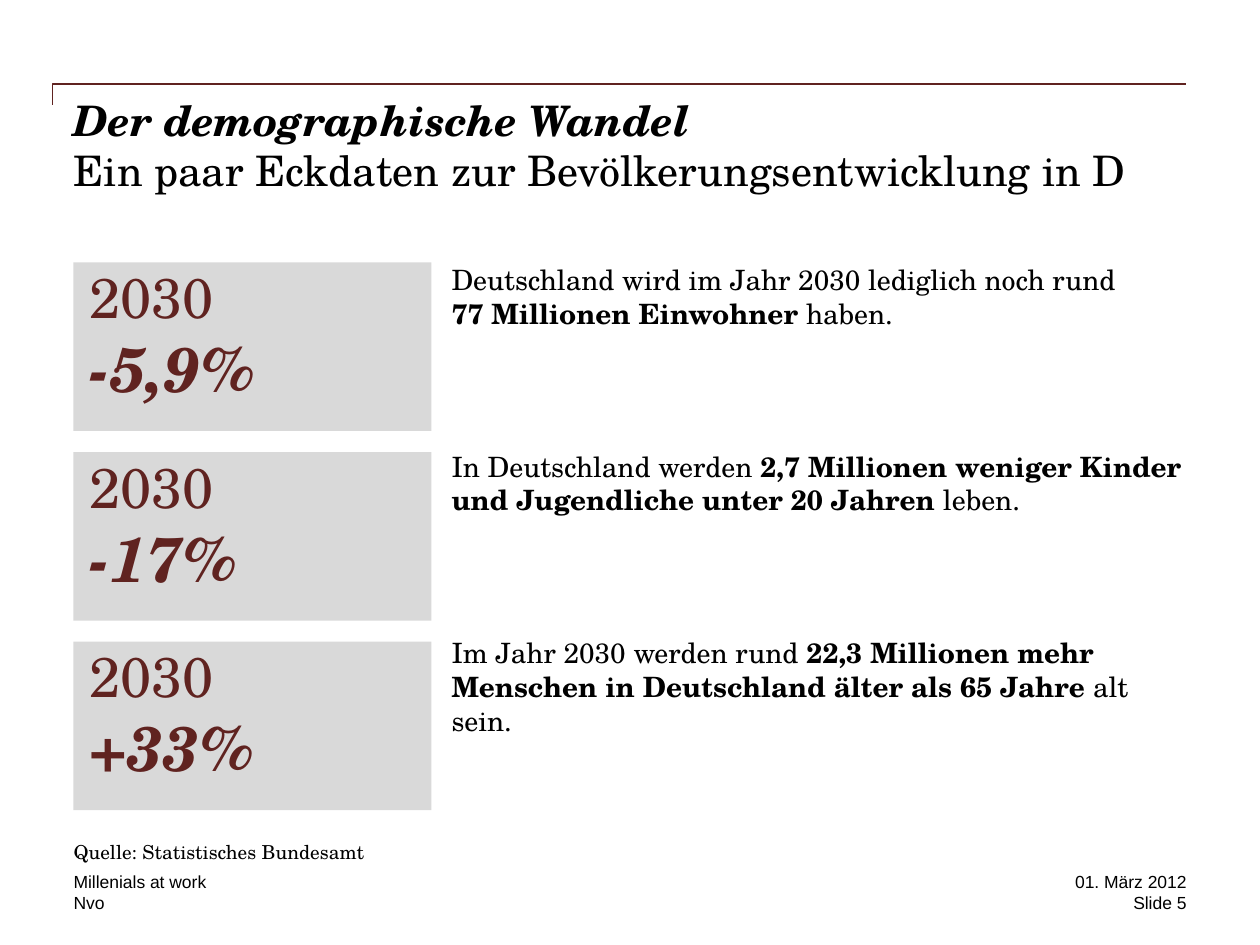
from lxml import etree
from pptx import Presentation
from pptx.dml.color import RGBColor
from pptx.enum.shapes import MSO_SHAPE
from pptx.enum.text import MSO_ANCHOR, PP_ALIGN
from pptx.oxml.ns import qn
from pptx.util import Pt

RECTANGLE = MSO_SHAPE.RECTANGLE
TOP, BOTTOM = MSO_ANCHOR.TOP, MSO_ANCHOR.BOTTOM
LEFT, RIGHT = PP_ALIGN.LEFT, PP_ALIGN.RIGHT

SERIF, SANS = "TeX Gyre Schola", "Arial"
BLACK, MAROON, GREY = "000000", "602320", "D9D9D9"

FIGURES = ["-5,9%", "-17%", "+33%"]
STATEMENTS = [
    ("Deutschland wird im Jahr 2030 lediglich noch rund \v", "77 Millionen Einwohner", " haben."),
    ("In Deutschland werden ", "2,7 Millionen weniger Kinder und Jugendliche unter 20 Jahren", " leben."),
    ("Im Jahr 2030 werden rund ", "22,3 Millionen mehr Menschen in Deutschland älter als 65 Jahre", " alt sein."),
]


def color(value):
    return RGBColor.from_string(value)


def format_paragraph(paragraph, size, font=SERIF, text_color=BLACK, alignment=LEFT):
    paragraph.alignment = alignment
    for run in paragraph.runs:
        run.font.size = Pt(size)
        run.font.name = font
        run.font.color.rgb = color(text_color)
    for line_break in paragraph._p.findall(qn("a:br")):
        etree.SubElement(line_break, qn("a:rPr"), sz=str(size * 100))


def prepare_frame(text_frame, inset=0, anchor=TOP, wrap=True):
    text_frame.word_wrap = wrap
    text_frame.vertical_anchor = anchor
    text_frame.margin_left = Pt(inset)
    text_frame.margin_top = text_frame.margin_right = text_frame.margin_bottom = 0


def add_text(slide, box, text, size, font=SERIF, alignment=LEFT, anchor=TOP, wrap=True):
    text_frame = slide.shapes.add_textbox(*map(Pt, box)).text_frame
    prepare_frame(text_frame, anchor=anchor, wrap=wrap)
    paragraph = text_frame.paragraphs[0]
    paragraph.text = text
    format_paragraph(paragraph, size, font, alignment=alignment)
    return paragraph


def add_header_rule(slide, left, top, width, height):
    builder = slide.shapes.build_freeform(Pt(left), Pt(top + height))
    builder.add_line_segments([(Pt(left), Pt(top)), (Pt(left + width), Pt(top))], close=False)
    rule = builder.convert_to_shape()
    rule.shadow.inherit = False
    rule.fill.background()
    rule.line.color.rgb = color(MAROON)
    rule.line.width = Pt(1)


def add_title(slide, box):
    title = add_text(
        slide, box, "Der demographische Wandel\vEin paar Eckdaten zur Bevölkerungsentwicklung in D", 24
    )
    title.runs[0].font.bold = title.runs[0].font.italic = True


def add_figure_card(slide, box, figure):
    card = slide.shapes.add_shape(RECTANGLE, *map(Pt, box))
    card.shadow.inherit = False
    card.fill.solid()
    card.fill.fore_color.rgb = color(GREY)
    card.line.fill.background()
    text_frame = card.text_frame
    prepare_frame(text_frame, inset=9)
    text_frame.text = f"2030\n{figure}"
    year, change = text_frame.paragraphs
    format_paragraph(year, 32, text_color=MAROON)
    format_paragraph(change, 36, text_color=MAROON)
    change.runs[0].font.bold = change.runs[0].font.italic = True


def add_figure_column(slide, left, top, width, height, gap):
    card_height = (height - gap * (len(FIGURES) - 1)) / len(FIGURES)
    for index, figure in enumerate(FIGURES):
        card_top = top + index * (card_height + gap)
        add_figure_card(slide, (left, card_top, width, card_height), figure)


def add_statements(slide, box):
    text_frame = slide.shapes.add_textbox(*map(Pt, box)).text_frame
    prepare_frame(text_frame)
    for index, (opening, emphasis, ending) in enumerate(STATEMENTS):
        paragraph = text_frame.add_paragraph() if index else text_frame.paragraphs[0]
        paragraph.text = opening
        paragraph.add_run().text = emphasis
        paragraph.add_run().text = ending
        format_paragraph(paragraph, 16)
        paragraph.runs[1].font.bold = True
        paragraph.space_before = Pt(58.3 if index else 0)
        paragraph.space_after = Pt(10)


def add_footer(slide, left, top, width, line_height):
    right_width = 120
    right = left + width - right_width
    second = top + line_height
    add_text(slide, (left, top, 414, line_height), "Millenials at work", 10, SANS, anchor=BOTTOM)
    add_text(slide, (left, second, 204, line_height), "Nvo", 10, SANS)
    add_text(slide, (right, top, right_width, line_height), "01. März 2012", 10, SANS, RIGHT)
    add_text(slide, (right, second, right_width, line_height), "Slide 5", 10, SANS, RIGHT)


def main():
    presentation = Presentation()
    presentation.slide_width, presentation.slide_height = Pt(720), Pt(540)
    slide = presentation.slides.add_slide(presentation.slide_layouts[6])
    add_header_rule(slide, 30, 48, 648, 12)
    add_title(slide, (42, 54, 636, 72))
    add_statements(slide, (258, 150, 420, 348))
    add_figure_column(slide, 42, 150, 204.5, 313, 12)
    add_text(slide, (42, 480, 192, 30), "Quelle: Statistisches Bundesamt", 11, wrap=False)
    add_footer(slide, 42, 498, 636, 12)
    presentation.save("out.pptx")


if __name__ == "__main__":
    main()
